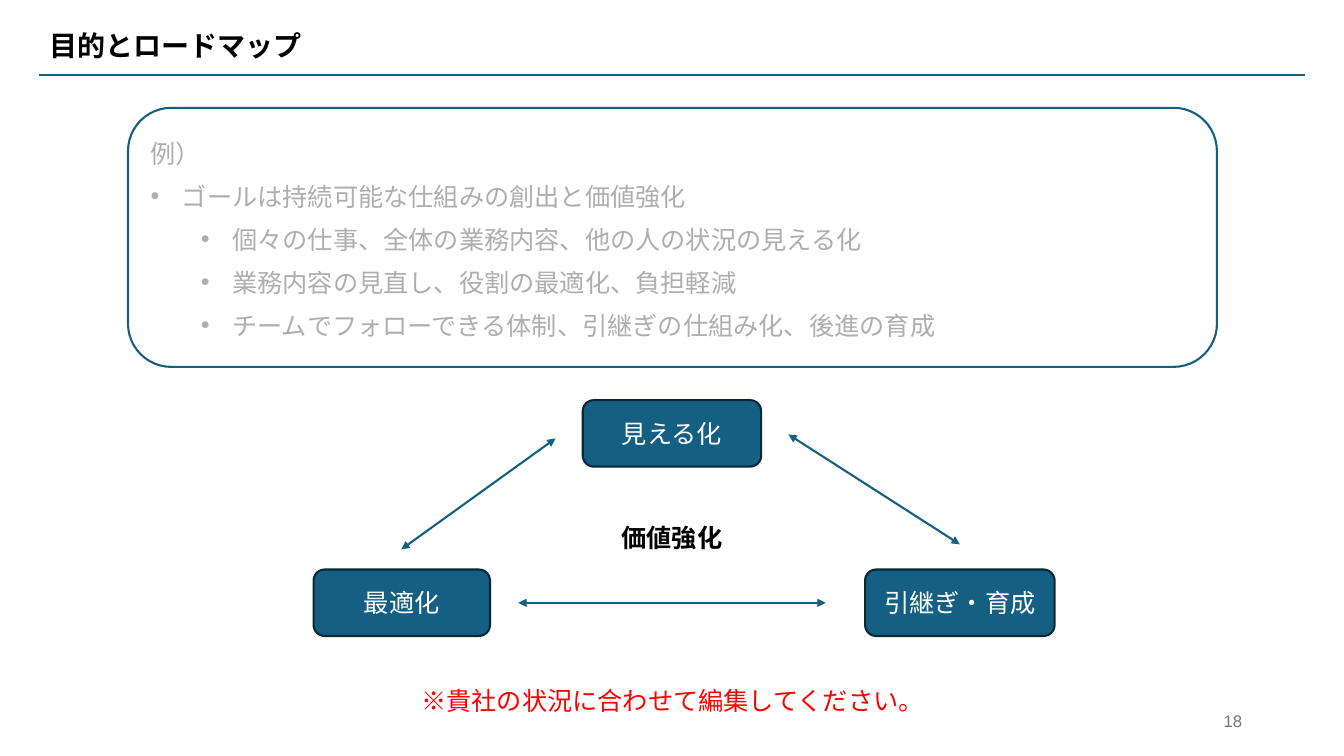
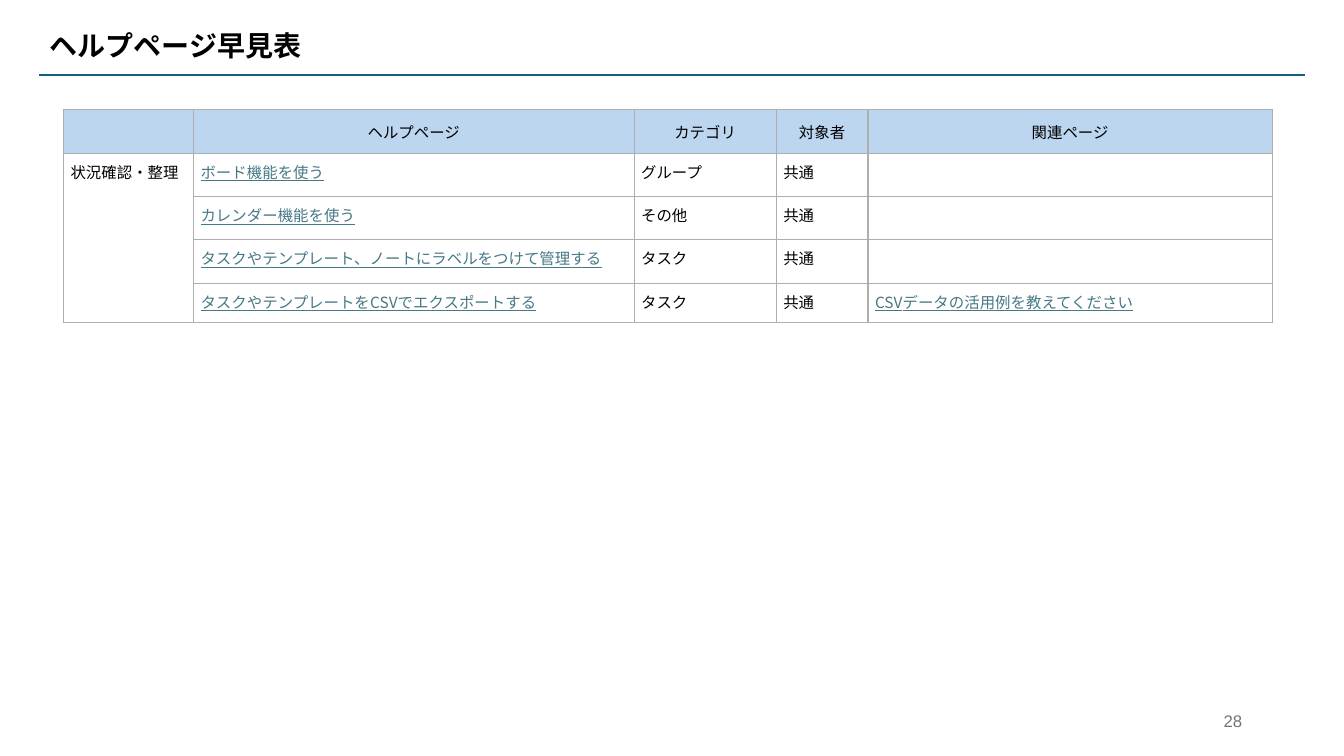
from lxml.etree import SubElement
from pptx import Presentation
from pptx.dml.color import RGBColor
from pptx.enum.shapes import MSO_CONNECTOR, MSO_SHAPE
from pptx.enum.text import MSO_ANCHOR, MSO_AUTO_SIZE, PP_ALIGN
from pptx.oxml import parse_xml
from pptx.oxml.ns import nsdecls, qn
from pptx.util import Inches, Pt

COLORS = {
    "main": "156082", "box_line": "082836", "black": "000000", "white": "FFFFFF",
    "gray": "AEAEAE", "number": "757575", "note": "FF0000",
    "header": "BBD6EE", "link": "467886",
}
FONT = "Noto Sans CJK JP"
NUMBER_FONT = "Arial"


def rgb(name):
    return RGBColor.from_string(COLORS[name])


class Deck:
    """Holds the shared style and the current slide."""

    def __init__(self):
        self.presentation = Presentation()
        self.presentation.slide_width = Inches(13.33)
        self.presentation.slide_height = Inches(7.5)
        self.slide = None

    def add_slide(self, title, number):
        layout = self.presentation.slide_layouts[5]
        self.slide = self.presentation.slides.add_slide(layout)
        # Title
        shape = self.slide.shapes.title
        shape.left, shape.top = Inches(0.39), Inches(0.2)
        shape.width, shape.height = Inches(9.13), Inches(0.54)
        frame = shape.text_frame
        frame.auto_size = MSO_AUTO_SIZE.NONE
        frame.vertical_anchor = MSO_ANCHOR.MIDDLE
        self.fill_paragraph(frame.paragraphs[0], title, size=20, bold=True, spacing=0.9)
        # Title rule and page number
        self.line((0.39, 0.74), (12.94, 0.74))
        self.text((9.42, 6.95, 3, 0.4), str(number), size=12, color="number",
                  font=NUMBER_FONT, align=PP_ALIGN.RIGHT, anchor=MSO_ANCHOR.MIDDLE)

    def fill_paragraph(self, paragraph, text, size=18, color="black", bold=False,
                       font=FONT, align=PP_ALIGN.LEFT, spacing=None, underline=False):
        paragraph.text = text
        paragraph.alignment = align
        if spacing:
            paragraph.line_spacing = spacing
        style = paragraph.font
        style.size, style.bold, style.underline = Pt(size), bold, underline
        style.color.rgb = rgb(color)
        style.name = font
        properties = paragraph._p.pPr.find(qn("a:defRPr"))
        SubElement(properties, qn("a:ea"), typeface=font)

    def text(self, box, text, anchor=MSO_ANCHOR.TOP, **style):
        shape = self.slide.shapes.add_textbox(*map(Inches, box))
        frame = shape.text_frame
        frame.word_wrap = True
        frame.vertical_anchor = anchor
        self.fill_paragraph(frame.paragraphs[0], text, **style)

    def line(self, start, end, arrows=False):
        connector = self.slide.shapes.add_connector(
            MSO_CONNECTOR.STRAIGHT, *map(Inches, start + end))
        connector.line.color.rgb = rgb("main")
        connector.line.width = Pt(1.5)
        properties = connector._element.spPr
        if arrows:
            outline = properties.find(qn("a:ln"))
            for tag in ("a:headEnd", "a:tailEnd"):
                SubElement(outline, qn(tag), type="triangle")
        SubElement(properties, qn("a:effectLst"))

    def rounded(self, box, line, fill=None, anchor=MSO_ANCHOR.MIDDLE):
        shape = self.slide.shapes.add_shape(
            MSO_SHAPE.ROUNDED_RECTANGLE, *map(Inches, box))
        shape.shadow.inherit = False
        if fill:
            shape.fill.solid()
            shape.fill.fore_color.rgb = rgb(fill)
        else:
            shape.fill.background()
        shape.line.color.rgb = rgb(line)
        shape.line.width = Pt(1.5)
        shape.text_frame.word_wrap = True
        shape.text_frame.vertical_anchor = anchor
        return shape.text_frame

    def step(self, box, text):
        frame = self.rounded(box, "box_line", "main")
        self.fill_paragraph(frame.paragraphs[0], text, color="white",
                            align=PP_ALIGN.CENTER)

    def outline(self, box, items):
        """Items are (level, text); level None has no bullet."""
        frame = self.rounded(box, "main", anchor=MSO_ANCHOR.TOP)
        for index, (level, text) in enumerate(items):
            paragraph = frame.add_paragraph() if index else frame.paragraphs[0]
            self.fill_paragraph(paragraph, text, color="gray", spacing=1.42)
            if level is not None:
                paragraph.level = level
                self.bullet(paragraph, 0.31 + 0.5 * level)

    def bullet(self, paragraph, margin):
        properties = paragraph._p.pPr
        properties.set("marL", str(Inches(margin)))
        properties.set("indent", str(Inches(-0.31)))
        text_style = properties.find(qn("a:defRPr"))
        for xml in (f'<a:buClr {nsdecls("a")}><a:srgbClr val="{COLORS["gray"]}"/></a:buClr>',
                    f'<a:buFont {nsdecls("a")} typeface="Arial"/>',
                    f'<a:buChar {nsdecls("a")} char="•"/>'):
            text_style.addprevious(parse_xml(xml))

    def table(self, left, top, widths, heights, rows, link_columns):
        table = self.slide.shapes.add_table(
            len(rows), len(widths), Inches(left), Inches(top),
            Inches(sum(widths)), Inches(sum(heights))).table
        table.first_row = table.horz_banding = False
        for column, width in zip(table.columns, widths):
            column.width = Inches(width)
        for row, height in zip(table.rows, heights):
            row.height = Inches(height)
        for row_index, row in enumerate(rows):
            for column_index, text in enumerate(row):
                self.cell(table.cell(row_index, column_index), text,
                          header=row_index == 0, link=column_index in link_columns)
        return table

    def cell(self, cell, text, header, link):
        cell.margin_left = cell.margin_right = Inches(0.07)
        cell.margin_top = cell.margin_bottom = Inches(0.07)
        linked = link and not header
        self.fill_paragraph(cell.text_frame.paragraphs[0], text, size=11,
                            color="link" if linked else "black", underline=linked,
                            align=PP_ALIGN.CENTER if header else PP_ALIGN.LEFT)
        cell.vertical_anchor = MSO_ANCHOR.MIDDLE if header else MSO_ANCHOR.TOP
        if header:
            cell.fill.solid()
            cell.fill.fore_color.rgb = rgb("header")
        else:
            cell.fill.background()
        # Borders stand before the fill
        for index, side in enumerate("LRTB"):
            cell._tc.tcPr.insert(index, parse_xml(
                f'<a:ln{side} {nsdecls("a")} w="{Pt(1)}"><a:solidFill>'
                f'<a:srgbClr val="{COLORS["gray"]}"/></a:solidFill></a:ln{side}>'))


def add_roadmap(deck):
    deck.add_slide("目的とロードマップ", 18)
    deck.text((3.11, 6.62, 7.12, 0.53), "※貴社の状況に合わせて編集してください。",
              color="note", align=PP_ALIGN.CENTER, spacing=1.42)
    # Goals
    deck.outline((1.27, 1.07, 10.8, 2.57), [
        (None, "例）"),
        (0, "ゴールは持続可能な仕組みの創出と価値強化"),
        (1, "個々の仕事、全体の業務内容、他の人の状況の見える化"),
        (1, "業務内容の見直し、役割の最適化、負担軽減"),
        (1, "チームでフォローできる体制、引継ぎの仕組み化、後進の育成"),
    ])
    # Triangle of steps
    for left, top, width, label in ((5.78, 3.97, 1.77, "見える化"),
                                    (3.11, 5.65, 1.75, "最適化"),
                                    (8.58, 5.65, 1.88, "引継ぎ・育成")):
        deck.step((left, top, width, 0.66), label)
    for start, end in (((5.14, 5.98), (8.19, 5.98)),
                       ((7.82, 4.31), (9.52, 5.4)),
                       ((5.51, 4.35), (3.98, 5.45))):
        deck.line(start, end, arrows=True)
    deck.text((5.78, 5.01, 1.77, 0.53), "価値強化", bold=True,
              align=PP_ALIGN.CENTER, spacing=1.42)


def add_help_pages(deck):
    deck.add_slide("ヘルプページ早見表", 28)
    rows = [
        ("", "ヘルプページ", "カテゴリ", "対象者", "関連ページ"),
        ("状況確認・整理", "ボード機能を使う", "グループ", "共通", ""),
        ("", "カレンダー機能を使う", "その他", "共通", ""),
        ("", "タスクやテンプレート、ノートにラベルをつけて管理する", "タスク", "共通", ""),
        ("", "タスクやテンプレートをCSVでエクスポートする", "タスク", "共通",
         "CSVデータの活用例を教えてください"),
    ]
    table = deck.table(0.63, 1.09, [1.29, 4.37, 1.41, 0.91, 4.01],
                       [0.43] * 4 + [0.39], rows, link_columns=(1, 4))
    table.cell(1, 0).merge(table.cell(4, 0))


def main():
    deck = Deck()
    add_roadmap(deck)
    add_help_pages(deck)
    deck.presentation.save("out.pptx")


if __name__ == "__main__":
    main()
